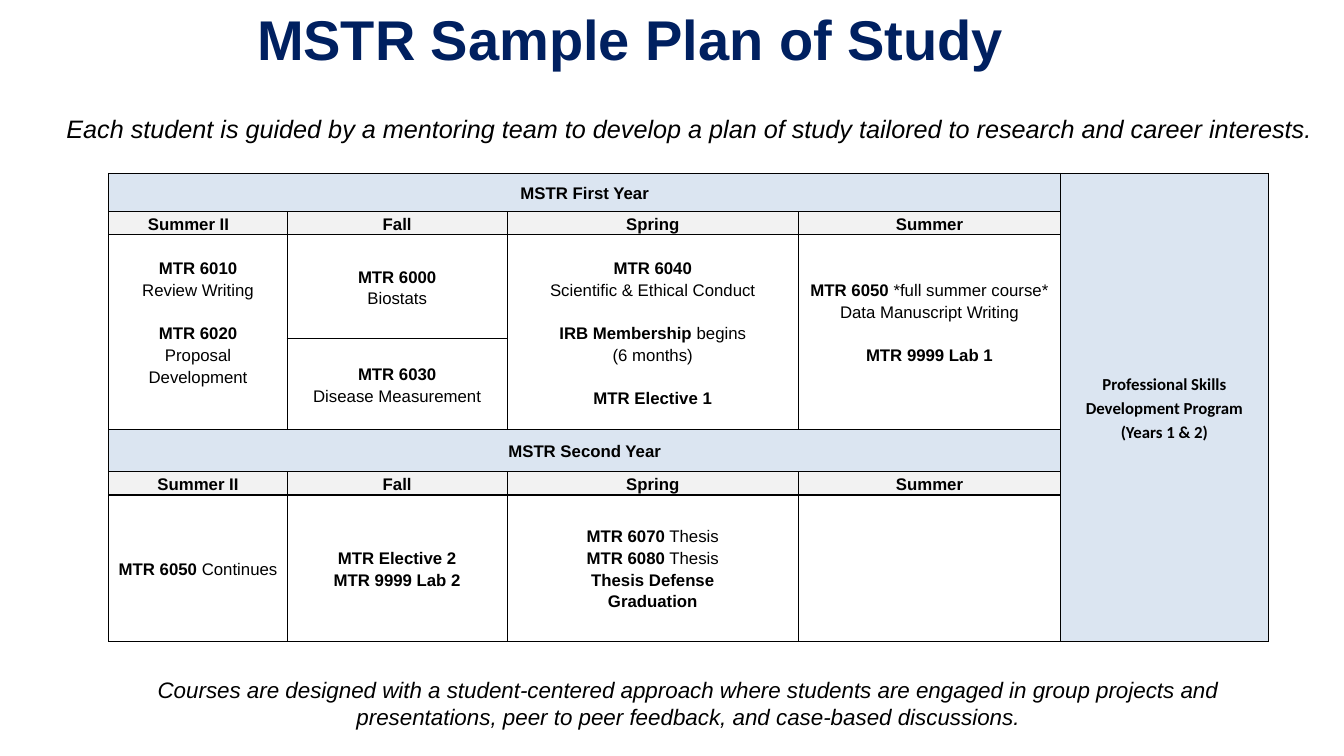
from dataclasses import dataclass

import pptx
import pptx.dml.color
import pptx.enum.text
import pptx.oxml
import pptx.oxml.ns
import pptx.util
from pptx.util import Inches


@dataclass(frozen=True)
class Theme:
    font: str = "Arial"
    side_font: str = "Calibri"
    navy: str = "002060"
    black: str = "000000"
    year_fill: str = "DBE5F1"
    term_fill: str = "F2F2F2"
    cell_fill: str = "FFFFFF"
    title_size: int = 40
    intro_size: int = 18
    closing_size: int = 16
    table_size: int = 12
    line_spacing: float = 1.15
    course_gap: float = 15.5
    border: float = 1


THEME = Theme()
COLUMNS = [1.77, 2.18, 2.89, 2.6, 2.06]
ROWS = [0.38, 0.22, 1.03, 0.9, 0.42, 0.22, 1.45]
TERMS = ["Summer II", "Fall", "Spring", "Summer"]
YEARS = {0: "MSTR First Year", 4: "MSTR Second Year"}
MERGES = [(0, 0, 0, 3), (4, 0, 4, 3), (0, 4, 6, 4),
          (2, 0, 3, 0), (2, 2, 3, 2), (2, 3, 3, 3)]
COURSES = {
    (2, 0): [[("MTR 6010", ""), ("", "Review Writing")],
             [("MTR 6020", ""), ("", "Proposal Development")]],
    (2, 1): [[("MTR 6000", ""), ("", "Biostats")]],
    (3, 1): [[("MTR 6030", ""), ("", "Disease Measurement")]],
    (2, 2): [[("MTR 6040", ""), ("", "Scientific & Ethical Conduct")],
             [("IRB Membership", " begins"), ("", "(6 months)")],
             [("MTR Elective 1", "")]],
    (2, 3): [[("MTR 6050", " *full summer course*"), ("", "Data Manuscript Writing")],
             [("MTR 9999 Lab 1", "")]],
    (6, 0): [[("MTR 6050", " Continues")]],
    (6, 1): [[("MTR Elective 2", ""), ("MTR 9999 Lab 2", "")]],
    (6, 2): [[("MTR 6070", " Thesis"), ("MTR 6080", " Thesis"),
              ("Thesis Defense", ""), ("Graduation", "")]],
}
SIDE = [[("Professional Skills Development Program", ""), ("(Years 1 & 2)", "")]]


def rgb(value):
    return pptx.dml.color.RGBColor.from_string(value)


def style(p, size, color=THEME.black, font=THEME.font):
    p.alignment = pptx.enum.text.PP_ALIGN.CENTER
    p.font.name = font
    p.font.size = pptx.util.Pt(size)
    p.font.color.rgb = rgb(color)


def add_text(s, box, text, size, color=THEME.black, bold=False, italic=False,
             inset=(0.1, 0.05), spacing=1.0):
    tf = s.shapes.add_textbox(*map(Inches, box)).text_frame
    tf.word_wrap = True
    tf.margin_left = tf.margin_right = Inches(inset[0])
    tf.margin_top = tf.margin_bottom = Inches(inset[1])
    p = tf.paragraphs[0]
    p.text = text
    p.line_spacing = spacing
    style(p, size, color)
    p.font.bold = bold
    p.font.italic = italic


def format_cell(cell, fill):
    cell.fill.solid()
    cell.fill.fore_color.rgb = rgb(fill)
    cell.vertical_anchor = pptx.enum.text.MSO_ANCHOR.MIDDLE
    cell.margin_left = cell.margin_right = Inches(0.07)
    cell.margin_top = cell.margin_bottom = 0
    style(cell.text_frame.paragraphs[0], THEME.table_size)
    tcPr = cell._tc.get_or_add_tcPr()
    for i, side in enumerate(("lnL", "lnR", "lnT", "lnB")):
        tcPr.insert(i, pptx.oxml.parse_xml(
            f'<a:{side} {pptx.oxml.ns.nsdecls("a")} w="{pptx.util.Pt(THEME.border)}">'
            f'<a:solidFill><a:srgbClr val="{THEME.black}"/></a:solidFill></a:{side}>'))


def write_cell(cell, groups, font=THEME.font):
    tf = cell.text_frame
    lines = [(g, i, line) for g, group in enumerate(groups) for i, line in enumerate(group)]
    for n, (g, i, line) in enumerate(lines):
        p = tf.paragraphs[0] if n == 0 else tf.add_paragraph()
        style(p, THEME.table_size, font=font)
        p.line_spacing = THEME.line_spacing
        if g and i == 0:
            p.space_before = pptx.util.Pt(THEME.course_gap)
        if not all(line):
            p.font.bold = bool(line[0])
        for text, bold in zip(line, (True, False)):
            if text:
                r = p.add_run()
                r.text = text
                if all(line):
                    r.font.bold = bold


def add_plan(s, left, top):
    table = s.shapes.add_table(len(ROWS), len(COLUMNS), Inches(left), Inches(top),
                               Inches(sum(COLUMNS)), Inches(sum(ROWS))).table
    table.first_row = table.horz_banding = False
    for column, width in zip(table.columns, COLUMNS):
        column.width = Inches(width)
    for row, height in zip(table.rows, ROWS):
        row.height = Inches(height)
    for r in range(len(ROWS)):
        for c in range(len(COLUMNS)):
            if r in YEARS or c == 4:
                fill = THEME.year_fill
            else:
                fill = THEME.term_fill if r - 1 in YEARS else THEME.cell_fill
            format_cell(table.cell(r, c), fill)
    for r1, c1, r2, c2 in MERGES:
        table.cell(r1, c1).merge(table.cell(r2, c2))
    for r, year in YEARS.items():
        write_cell(table.cell(r, 0), [[(year, "")]])
        for c, term in enumerate(TERMS):
            write_cell(table.cell(r + 1, c), [[(term, "")]])
    for position, groups in COURSES.items():
        write_cell(table.cell(*position), groups)
    write_cell(table.cell(0, 4), SIDE, THEME.side_font)
    table.cell(1, 0).margin_right = Inches(0.26)
    for c in (0, 3):
        table.cell(2, c).margin_bottom = Inches(0.21)


def add_plan_slide(prs):
    s = prs.slides.add_slide(prs.slide_layouts[6])
    add_text(s, (0.5, 0.12, 11.5, 0.76), "MSTR Sample Plan of Study", THEME.title_size,
             THEME.navy, bold=True, inset=(0, 0), spacing=0.9)
    add_plan(s, 1.08, 1.72)
    add_text(s, (0.34, 1.08, 12.99, 0.4),
             "Each student is guided by a mentoring team to develop a plan of study "
             "tailored to research and career interests.", THEME.intro_size, italic=True)
    add_text(s, (1.13, 6.66, 11.39, 0.64),
             "Courses are designed with a student-centered approach where students are "
             "engaged in group projects and presentations, peer to peer feedback, and "
             "case-based discussions.", THEME.closing_size, italic=True)


def main():
    prs = pptx.Presentation()
    prs.slide_width, prs.slide_height = Inches(13.33), Inches(7.5)
    add_plan_slide(prs)
    prs.save("out.pptx")


if __name__ == "__main__":
    main()
